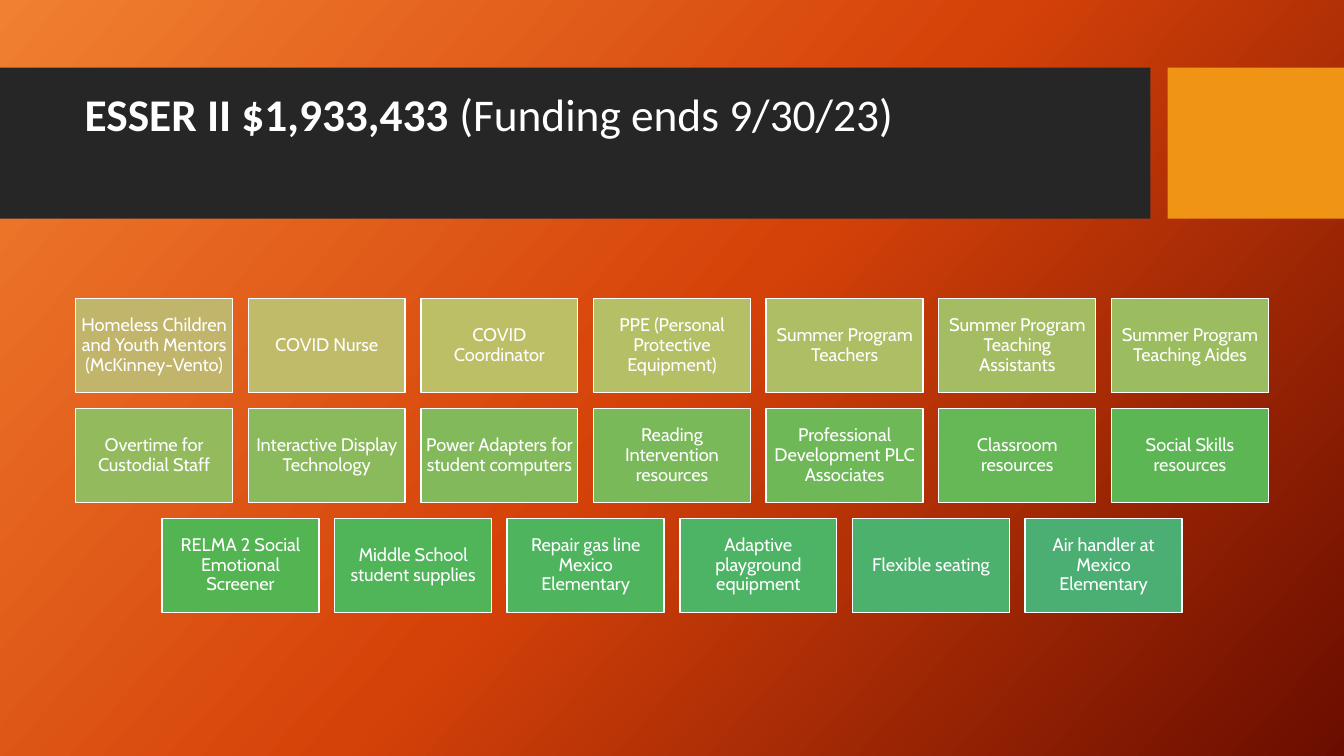
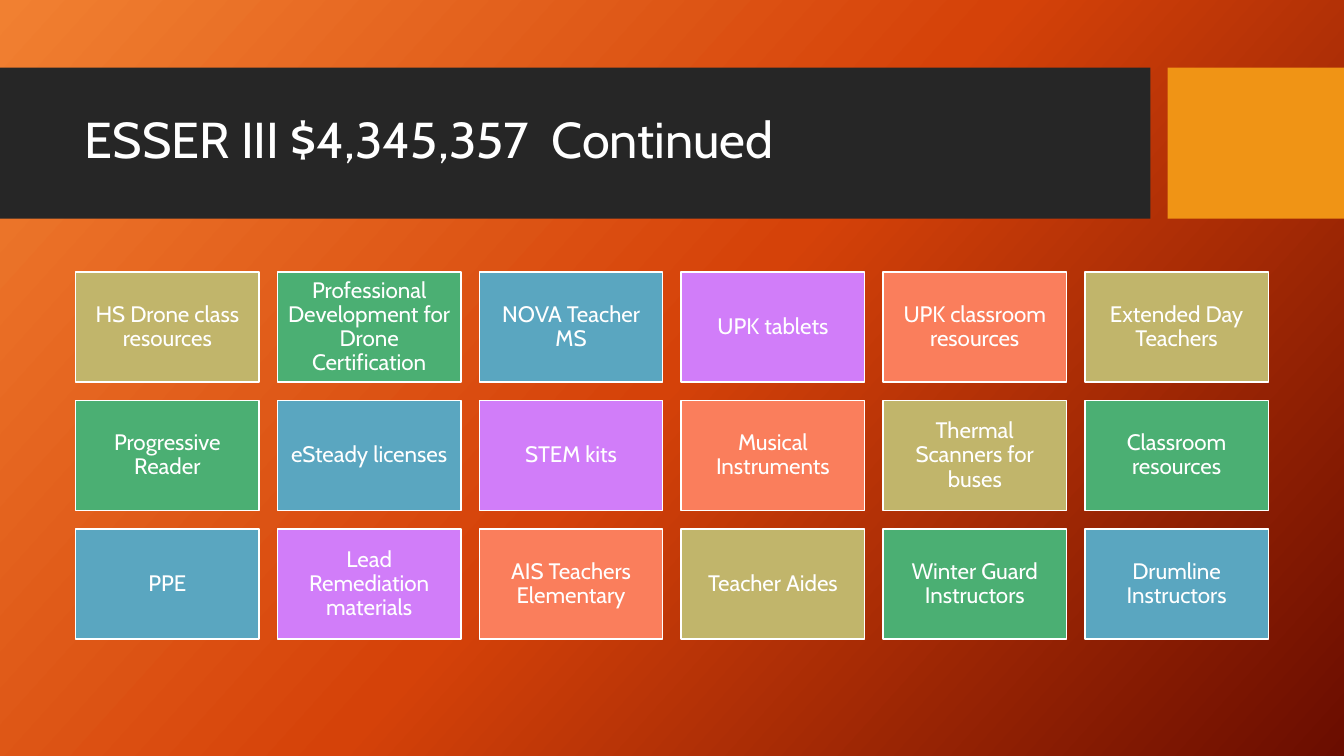
from colorsys import hls_to_rgb, rgb_to_hls
from copy import deepcopy

from pptx import Presentation
from pptx.dml.color import RGBColor
from pptx.enum.shapes import MSO_SHAPE
from pptx.enum.text import MSO_ANCHOR, MSO_AUTO_SIZE, PP_ALIGN
from pptx.oxml.ns import qn
from pptx.util import Inches, Pt

COLORS = {
    "white": "FFFFFF", "band": "262626", "accent": "F09415",
    "bg_start": "F18031", "bg_mid": "D54209", "bg_end": "6A0D00",
    "sand": "C1B56B", "green": "4BAF73", "blue": "5AA6C0",
    "violet": "D17DF9", "coral": "FA7E5C",
}
FONT = "Cabin"
W, H = 13.33, 7.5
TITLE_BOX = (0.74, 0.82, 10.51, 1.18)
BANDS = [((0, 0.67, 11.41, 1.5), "band"), ((11.58, 0.67, 1.75, 1.5), "accent")]
GRID_WIDTH, GRID_MIDDLE = 11.83, 4.52
GAP, ASPECT = 0.1, 0.6

ESSER_2 = [
    "Homeless Children and Youth Mentors (McKinney-Vento)", "COVID Nurse",
    "COVID Coordinator", "PPE (Personal Protective Equipment)",
    "Summer Program Teachers", "Summer Program Teaching Assistants",
    "Summer Program Teaching Aides",
    "Overtime for Custodial Staff", "Interactive Display Technology",
    "Power Adapters for student computers", "Reading Intervention resources",
    "Professional Development PLC Associates", "Classroom resources",
    "Social Skills resources",
    "RELMA 2 Social Emotional Screener", "Middle School student supplies",
    "Repair gas line Mexico Elementary", "Adaptive playground equipment",
    "Flexible seating", "Air handler at Mexico Elementary",
]
ESSER_3 = [
    "HS Drone class resources",
    "Professional Development for Drone Certification",
    "NOVA Teacher MS", "UPK tablets", "UPK classroom resources",
    "Extended Day Teachers",
    "Progressive Reader", "eSteady licenses", "STEM kits",
    "Musical Instruments", "Thermal Scanners for buses",
    "Classroom resources",
    "PPE", "Lead Remediation materials", "AIS Teachers Elementary",
    "Teacher Aides", "Winter Guard Instructors", "Drumline Instructors",
]


def blend(start, end, count):
    a, b = (rgb_to_hls(*(v / 255 for v in RGBColor.from_string(COLORS[n])))
            for n in (start, end))
    for i in range(count):
        hls = (x + (y - x) * i / (count - 1) for x, y in zip(a, b))
        yield RGBColor(*(round(v * 255) for v in hls_to_rgb(*hls)))


def cycle_fills(names, count):
    return [RGBColor.from_string(COLORS[names[i % len(names)]])
            for i in range(count)]


def add_text(p, text, size, font=FONT, bold=False):
    r = p.add_run()
    r.text = text
    r.font.name, r.font.size, r.font.bold = font, Pt(size), bold
    r.font.color.rgb = RGBColor.from_string(COLORS["white"])


def add_box(s, box, fill):
    sp = s.shapes.add_shape(MSO_SHAPE.RECTANGLE, *map(Inches, box))
    sp.shadow.inherit = False
    sp.fill.solid()
    sp.fill.fore_color.rgb = fill
    sp.line.fill.background()
    return sp


def set_background(master):
    fill = master.background.fill
    fill.gradient()
    fill.gradient_angle = 360 - 42
    stops = master.element.find(".//" + qn("a:gsLst"))
    stops.append(deepcopy(stops[-1]))
    names = ("bg_start", "bg_mid", "bg_end")
    for i, (stop, name) in enumerate(zip(fill.gradient_stops, names)):
        stop.color.rgb = RGBColor.from_string(COLORS[name])
        stop.position = i / 2


def move(sp, left, top, width, height):
    sp.left, sp.top = Inches(left), Inches(top)
    sp.width, sp.height = Inches(width), Inches(height)


def set_layout(layout, s):
    move(layout.placeholders[0], *TITLE_BOX)
    for i, (box, color) in enumerate(BANDS):
        sp = add_box(s, box, RGBColor.from_string(COLORS[color]))
        layout.shapes.element.insert(2 + i, sp.element)


def add_title(s, runs, rise=0):
    title = s.shapes.title
    if rise:
        left, top, width, height = TITLE_BOX
        move(title, left, top - rise, width, height)
    tf = title.text_frame
    tf.word_wrap, tf.auto_size = True, MSO_AUTO_SIZE.NONE
    tf.vertical_anchor = MSO_ANCHOR.MIDDLE
    p = tf.paragraphs[0]
    p.alignment, p.line_spacing = PP_ALIGN.LEFT, 0.9
    for text, fmt in runs:
        add_text(p, text, **fmt)


def add_tiles(s, labels, cols, fills, size, inset):
    w = GRID_WIDTH / (cols + GAP * (cols - 1))
    h, gap = w * ASPECT, w * GAP
    rows = [labels[i:i + cols] for i in range(0, len(labels), cols)]
    top = GRID_MIDDLE - (len(rows) * (h + gap) - gap) / 2
    colors = iter(fills)
    for i, row in enumerate(rows):
        left = (W - len(row) * (w + gap) + gap) / 2
        for j, label in enumerate(row):
            box = (left + j * (w + gap), top + i * (h + gap), w, h)
            sp = add_box(s, box, next(colors))
            sp.line.color.rgb = RGBColor.from_string(COLORS["white"])
            sp.line.width = Pt(1)
            tf = sp.text_frame
            tf.word_wrap, tf.vertical_anchor = True, MSO_ANCHOR.MIDDLE
            tf.margin_left = tf.margin_right = Inches(inset)
            tf.margin_top = tf.margin_bottom = Inches(inset)
            p = tf.paragraphs[0]
            p.alignment, p.line_spacing = PP_ALIGN.CENTER, 0.9
            add_text(p, label, size)


def main():
    prs = Presentation()
    prs.slide_width, prs.slide_height = Inches(W), Inches(H)
    set_background(prs.slide_master)
    layout = prs.slide_layouts[5]

    s = prs.slides.add_slide(layout)
    set_layout(layout, s)
    calibri = {"size": 32.4, "font": "Calibri"}
    add_title(s, [("ESSER II $1,933,433 ", {**calibri, "bold": True}),
                  ("(Funding ends 9/30/23)", calibri)], rise=0.25)
    add_tiles(s, ESSER_2, 7, blend("sand", "green", len(ESSER_2)), 13, 0.05)

    s = prs.slides.add_slide(layout)
    add_title(s, [("ESSER III $4,345,357  Continued", {"size": 36})])
    palette = ("sand", "green", "blue", "violet", "coral")
    add_tiles(s, ESSER_3, 6, cycle_fills(palette, len(ESSER_3)), 16, 0.07)

    prs.save("out.pptx")


if __name__ == "__main__":
    main()
